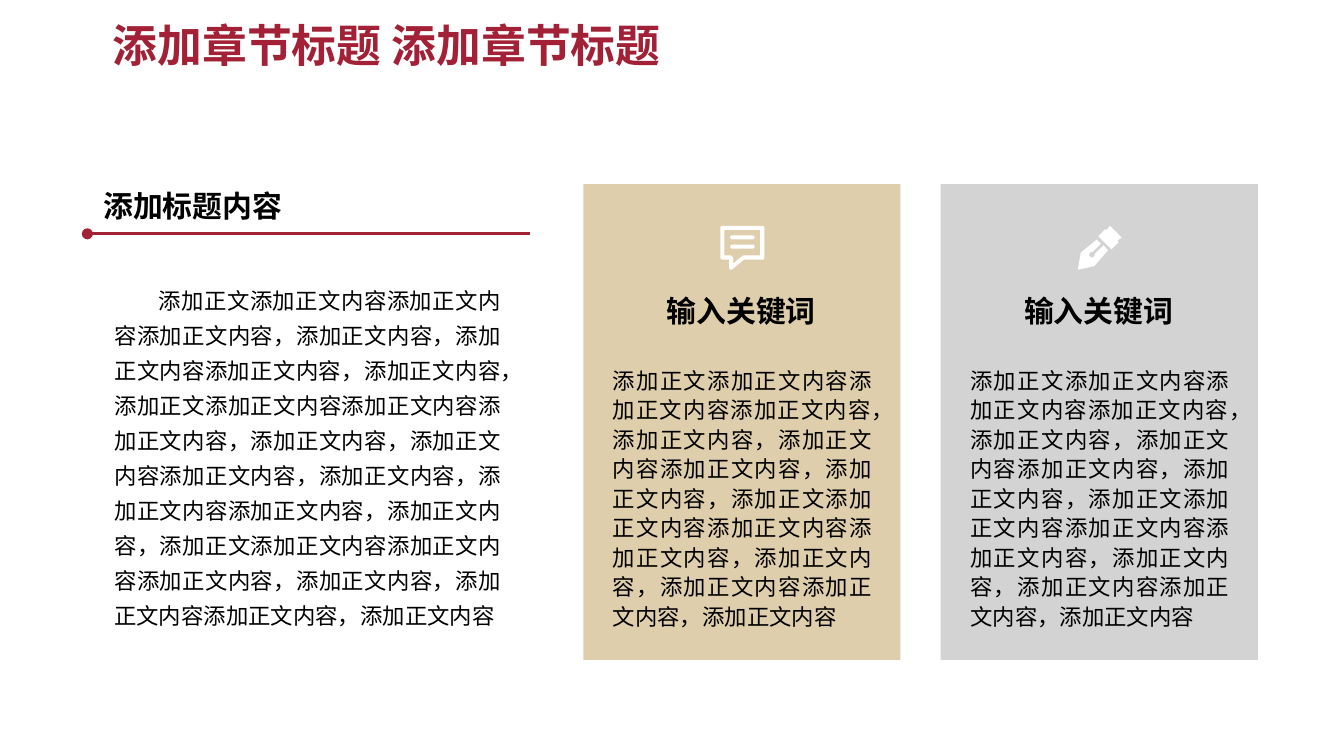
from math import cos, pi, sin

from pptx import Presentation
from pptx import util as u
from pptx.dml.color import RGBColor
from pptx.enum import shapes, text
from pptx.oxml.ns import qn
from lxml import etree

FONT = "Noto Sans CJK SC"
RED, SAND, GRAY, WHITE, BLACK = "A32136", "DFCEAC", "D3D3D3", "FFFFFF", "000000"

TAIL = "添加正文内容添加正文内容，添加正文内容"
SENTENCE = "添加正文添加正文内容添加正文内容添加正文内容，添加正文内容，" + TAIL
CARD_TEXT = "，".join([SENTENCE, SENTENCE])
INTRO_TEXT = "，".join([SENTENCE, SENTENCE, TAIL, SENTENCE])


def color(value):
    return RGBColor.from_string(value)


def fill_plain(shape, value):
    shape.shadow.inherit = False
    shape.fill.solid()
    shape.fill.fore_color.rgb = color(value)
    shape.line.fill.background()


def add_text(parent, at, words, size, bold=False, value=BLACK,
             align=text.PP_ALIGN.LEFT, anchor=text.MSO_ANCHOR.TOP):
    box = parent.shapes.add_textbox(*map(u.Inches, at))
    frame = box.text_frame
    frame.word_wrap = True
    frame.vertical_anchor = anchor
    frame.text = words
    para = frame.paragraphs[0]
    para.alignment = align
    span = para.runs[0]
    span.font.size = u.Pt(size)
    span.font.bold = bold
    span.font.name = FONT
    span.font.color.rgb = color(value)
    latin = span.font._element.find(qn("a:latin"))
    east_asian = etree.Element(qn("a:ea"), typeface=FONT)
    latin.addnext(east_asian)
    return box


def add_body(parent, at, words, spacing, indent=0):
    box = add_text(parent, at, words, 12, align=text.PP_ALIGN.JUSTIFY)
    frame = box.text_frame
    frame.margin_left = frame.margin_right = u.Inches(0.12)
    frame.margin_top = frame.margin_bottom = u.Inches(0.08)
    para = frame.paragraphs[0]
    para.line_spacing = spacing
    if indent:
        properties = para._p.get_or_add_pPr()
        properties.set("marL", "0")
        properties.set("indent", str(u.Inches(indent)))


def arc(x, y, radius, start, end, steps=6):
    """Points on a circle, with angles in degrees clockwise from the right."""
    angles = [(start + (end - start) * i / steps) * pi / 180 for i in range(steps + 1)]
    return [(x + radius * cos(a), y + radius * sin(a)) for a in angles]


def pill(left, right, y, radius):
    return arc(left, y, radius, 90, 270) + arc(right, y, radius, -90, 90)


def comment_outlines():
    """Speech bubble with two text bars, in thousandths of an inch."""
    bubble = (arc(15, 15, 15, 180, 270) + arc(312, 15, 15, 270, 360)
              + arc(312, 237, 15, 0, 90) + [(175, 252)]
              + arc(80, 312, 15, 60, 180) + [(65, 252)]
              + arc(15, 237, 15, 90, 180))
    window = [(31, 31), (31, 221), (75, 221), (90, 228), (96, 240), (96, 281),
              (160, 227), (172, 221), (296, 221), (296, 31)]
    return [bubble, window, pill(88, 240, 86, 15), pill(88, 240, 155, 15)]


def pen_outlines():
    """Fountain pen nib and its holder, in thousandths of an inch."""
    nib = ([(122, 300), (0, 327), (22, 200), (140, 103), (172, 134), (112, 194)]
           + arc(105, 215, 21, 285, -15, 12)
           + [(192, 145), (224, 183)])
    holder = [(212, 34), (204, 25), (153, 78), (250, 175), (303, 124),
              (293, 114), (325, 87), (239, 0)]
    return [nib, holder]


def add_icon(parent, left, top, outlines):
    first, *others = outlines
    builder = parent.shapes.build_freeform(*first[0], scale=u.Inches(1) / 1000)
    builder.add_line_segments(first[1:], close=True)
    for outline in others:
        builder.move_to(*outline[0])
        builder.add_line_segments(outline[1:], close=True)
    icon = builder.convert_to_shape(u.Inches(left), u.Inches(top))
    fill_plain(icon, WHITE)


def add_card(page, left, value, outlines):
    card = page.shapes.add_group_shape()
    panel = card.shapes.add_shape(
        shapes.MSO_SHAPE.RECTANGLE, *map(u.Inches, (left, 1.37, 2.36, 3.54)))
    fill_plain(panel, value)
    add_body(card, (left + 0.1, 2.63, 2.17, 2.14), CARD_TEXT, 1.1)
    add_text(card, (left + 0.43, 2.13, 1.49, 0.37), "输入关键词", 16, True,
             align=text.PP_ALIGN.CENTER)
    add_icon(card, left + 1.02, 1.68, outlines)


def add_rule(page, left, right, y):
    """Red line that starts with a dot."""
    rule = page.shapes.add_connector(
        shapes.MSO_CONNECTOR.STRAIGHT, *map(u.Inches, (left, y, right, y)))
    rule.line.color.rgb = color(RED)
    rule.line.width = u.Pt(1.5)
    etree.SubElement(rule.line._get_or_add_ln(), qn("a:headEnd"), type="oval")
    etree.SubElement(rule._element.spPr, qn("a:effectLst"))


def main():
    deck = Presentation()
    deck.slide_width = u.Inches(10)
    deck.slide_height = u.Inches(10 * 9 / 16)
    page = deck.slides.add_slide(deck.slide_layouts[6])
    add_text(page, (0.74, 0.06, 6.1, 0.54), "添加章节标题 添加章节标题", 24, True,
             RED, anchor=text.MSO_ANCHOR.MIDDLE)
    add_card(page, 4.34, SAND, comment_outlines())
    add_card(page, 7, GRAY, pen_outlines())
    add_text(page, (0.65, 1.35, 1.57, 0.39), "添加标题内容", 16, True,
             align=text.PP_ALIGN.CENTER)
    add_rule(page, 0.65, 3.94, 1.74)
    add_body(page, (0.73, 2, 3.12, 2.76), INTRO_TEXT, 1.3, indent=0.33)
    deck.save("out.pptx")


if __name__ == "__main__":
    main()
